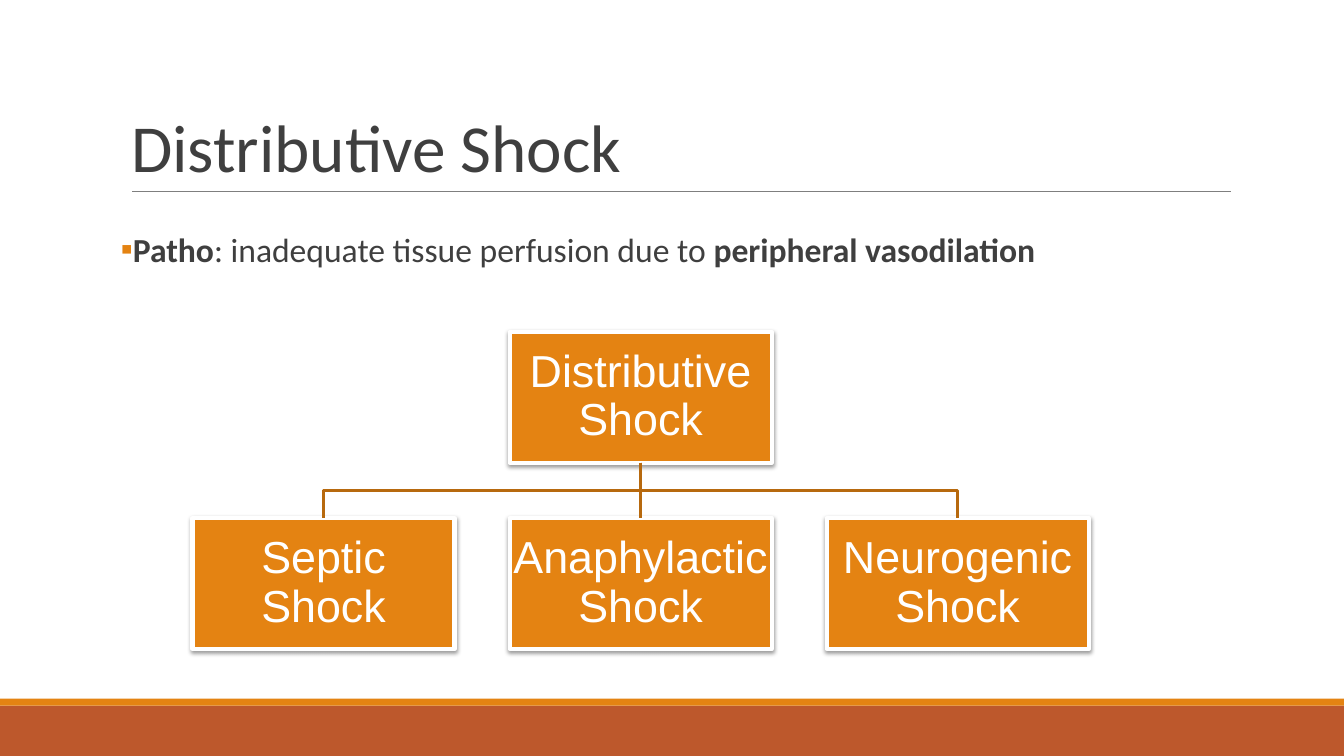
from lxml.etree import SubElement
from pptx import Presentation
from pptx.dml.color import RGBColor
from pptx.enum.shapes import MSO_CONNECTOR, MSO_SHAPE
from pptx.enum.text import MSO_ANCHOR, MSO_AUTO_SIZE, PP_ALIGN
from pptx.oxml.ns import qn
from pptx.util import Inches, Pt

ORANGE = RGBColor(0xE4, 0x83, 0x12)
RUST = RGBColor(0xBD, 0x58, 0x2C)
BROWN = RGBColor(0xB7, 0x69, 0x0E)
CHARCOAL = RGBColor(0x3F, 0x3F, 0x3F)
GRAY = RGBColor(0x7F, 0x7F, 0x7F)
WHITE = RGBColor(0xFF, 0xFF, 0xFF)

TEXT_LEFT, TEXT_WIDTH = 9, 82.5
NODE_WIDTH, NODE_HEIGHT = 19.5, 17.33
FIRST_NODE_LEFT, NODE_PITCH = 14.33, 23.59
PARENT_TOP, CHILD_TOP = 43.87, 68.53
CHILDREN = ["Septic Shock", "Anaphylactic Shock", "Neurogenic Shock"]


class ShockSlide:
    body_font = "Calibri"
    node_font = "Arial"

    def __init__(self, deck):
        self.deck = deck
        self.page = deck.slides.add_slide(deck.slide_layouts[5])

    def across(self, percent):
        return round(self.deck.slide_width * percent / 100)

    def down(self, percent):
        return round(self.deck.slide_height * percent / 100)

    def area(self, left, top, width, height):
        return self.across(left), self.down(top), self.across(width), self.down(height)

    def frame(self, box, anchor, side, edge):
        frame = box.text_frame
        frame.word_wrap = True
        frame.auto_size = MSO_AUTO_SIZE.NONE
        frame.vertical_anchor = anchor
        frame.margin_left = frame.margin_right = Inches(side)
        frame.margin_top = frame.margin_bottom = Inches(edge)
        return frame

    def add_text(self, frame, spans, font, size, color, align, spacing):
        para = frame.paragraphs[0]
        para.alignment = align
        para.line_spacing = spacing
        for text, bold in spans:
            span = para.add_run()
            span.text = text
            span.font.name = font
            span.font.size = Pt(size)
            span.font.bold = bold
            span.font.color.rgb = color
        return para

    def title(self, text, top, height):
        box = self.page.shapes.title
        box.left, box.top, box.width, box.height = self.area(TEXT_LEFT, top, TEXT_WIDTH, height)
        frame = self.frame(box, MSO_ANCHOR.BOTTOM, 0.1, 0.05)
        self.add_text(frame, [(text, False)], self.body_font, 48, CHARCOAL, PP_ALIGN.LEFT, 0.85)

    def bullet(self, spans, top, height):
        box = self.page.shapes.add_textbox(*self.area(TEXT_LEFT, top, TEXT_WIDTH, height))
        frame = self.frame(box, MSO_ANCHOR.TOP, 0, 0.05)
        para = self.add_text(frame, spans, self.body_font, 24, CHARCOAL, PP_ALIGN.LEFT, 1.5)
        properties = para._p.get_or_add_pPr()
        properties.set("marL", str(Inches(0.1)))
        properties.set("indent", str(Inches(-0.13)))
        color = SubElement(properties, qn("a:buClr"))
        SubElement(color, qn("a:srgbClr"), val=str(ORANGE))
        SubElement(properties, qn("a:buFont"), typeface=self.body_font)
        SubElement(properties, qn("a:buChar"), char="▪")

    def rectangle(self, left, top, width, height, color):
        box = self.page.shapes.add_shape(MSO_SHAPE.RECTANGLE, *self.area(left, top, width, height))
        box.shadow.inherit = False
        box.fill.solid()
        box.fill.fore_color.rgb = color
        box.line.fill.background()
        return box

    def node(self, text, column, top):
        left = FIRST_NODE_LEFT + column * NODE_PITCH
        box = self.rectangle(left, top, NODE_WIDTH, NODE_HEIGHT, ORANGE)
        box.line.color.rgb = WHITE
        box.line.width = Pt(3)
        effects = box._element.spPr.find(qn("a:effectLst"))
        shadow = SubElement(effects, qn("a:outerShdw"), blurRad=str(Pt(3.1)),
                            dist=str(Pt(1.6)), dir="5400000", rotWithShape="0")
        color = SubElement(shadow, qn("a:srgbClr"), val="000000")
        SubElement(color, qn("a:alpha"), val="38000")
        frame = self.frame(box, MSO_ANCHOR.MIDDLE, 0.02, 0.02)
        self.add_text(frame, [(text, False)], self.node_font, 32, WHITE, PP_ALIGN.CENTER, 0.9)
        return box

    def line(self, start, end, color, weight):
        connector = self.page.shapes.add_connector(MSO_CONNECTOR.STRAIGHT, *start, *end)
        connector.line.color.rgb = color
        connector.line.width = Pt(weight)
        SubElement(connector._element.spPr, qn("a:effectLst"))
        return connector

    def branch(self, parent, child):
        start_x, end_x = (box.left + box.width // 2 for box in (parent, child))
        start_y, end_y = parent.top + parent.height, child.top
        if start_x == end_x:
            connector = self.line((start_x, start_y), (end_x, end_y), BROWN, 2)
            connector.begin_connect(parent, 2)
            connector.end_connect(child, 0)
            return
        middle = (start_y + end_y) // 2
        builder = self.page.shapes.build_freeform(start_x, start_y)
        builder.add_line_segments([(start_x, middle), (end_x, middle), (end_x, end_y)], close=False)
        elbow = builder.convert_to_shape()
        elbow.shadow.inherit = False
        elbow.fill.background()
        elbow.line.color.rgb = BROWN
        elbow.line.width = Pt(2)


def main():
    deck = Presentation()
    deck.slide_width, deck.slide_height = Inches(13.33), Inches(7.5)
    slide = ShockSlide(deck)
    slide.rectangle(0, 93.33, 100, 6.67, RUST)
    slide.rectangle(0, 92.4, 100, 0.93, ORANGE)
    rule_y = slide.down(25.33)
    slide.line((slide.across(9.83), rule_y), (slide.across(91.58), rule_y), GRAY, 0.75)
    slide.title("Distributive Shock", 4.13, 21.2)
    slide.bullet([("Patho", True), (": inadequate tissue perfusion due to ", False),
                  ("peripheral vasodilation", True)], 26.93, 58.67)
    parent = slide.node("Distributive Shock", 1, PARENT_TOP)
    for column, text in enumerate(CHILDREN):
        slide.branch(parent, slide.node(text, column, CHILD_TOP))
    deck.save("out.pptx")


if __name__ == "__main__":
    main()
